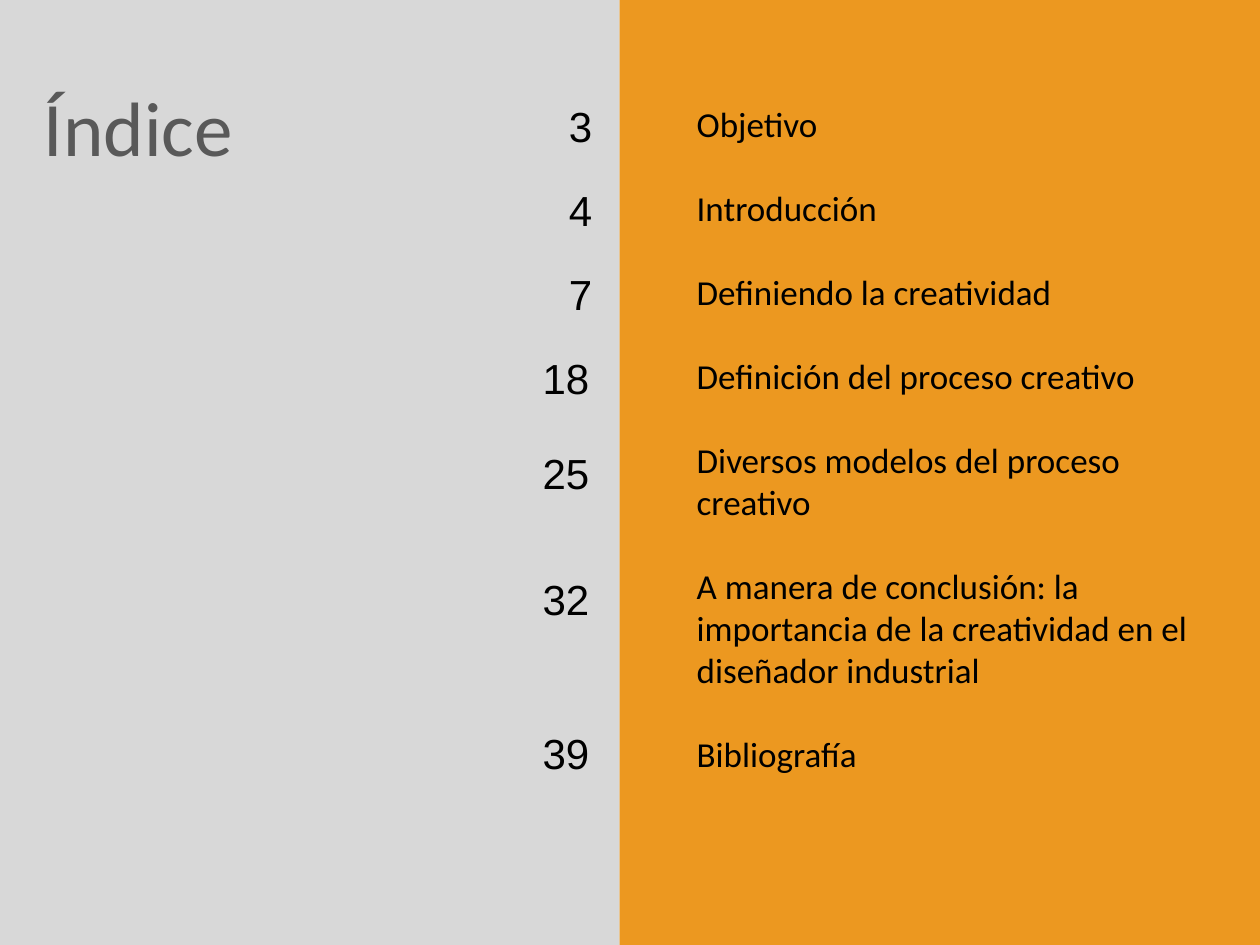
from pptx import Presentation
from pptx.dml.color import RGBColor
from pptx.enum.shapes import MSO_SHAPE
from pptx.util import Pt

COLORS = {"orange": "EC9820", "gray": "D8D8D8", "title": "595959", "text": "000000"}
WIDTH, HEIGHT = 720, 540
DIVIDER = 354
PAGE_LEFT = {1: 318, 2: 303}  # by number of digits

# Section, page number, top of the page number
SECTIONS = [
    ("Objetivo", "3", 54),
    ("Introducción", "4", 102),
    ("Definiendo la creatividad", "7", 150),
    ("Definición del proceso creativo", "18", 198),
    ("Diversos modelos del proceso creativo", "25", 252),
    ("A manera de conclusión: la importancia de la creatividad en el diseñador industrial",
     "32", 324),
    ("Bibliografía", "39", 412),
]


class IndexSlide:
    heading_font = "Calibri"
    number_font = "Arial"

    def __init__(self, presentation):
        self.slide = presentation.slides.add_slide(presentation.slide_layouts[6])

    def panel(self, left, width, color):
        shape = self.slide.shapes.add_shape(
            MSO_SHAPE.RECTANGLE, Pt(left), Pt(0), Pt(width), Pt(HEIGHT))
        shape.shadow.inherit = False
        shape.fill.solid()
        shape.fill.fore_color.rgb = RGBColor.from_string(COLORS[color])
        shape.line.fill.background()

    def text(self, lines, left, top, width, height, size, font, color="text", gap=0):
        """Add a text box with one paragraph per line, gap points apart."""
        box = self.slide.shapes.add_textbox(Pt(left), Pt(top), Pt(width), Pt(height))
        text_frame = box.text_frame
        text_frame.word_wrap = True
        text_frame.text = "\n".join(lines)
        for index, paragraph in enumerate(text_frame.paragraphs):
            paragraph.space_before = Pt(gap if index else 0)
            for run in paragraph.runs:
                run.font.size = Pt(size)
                run.font.name = font
                run.font.color.rgb = RGBColor.from_string(COLORS[color])

    def title(self, text):
        self.text([text], 18, 42, 126, 60, 44, self.heading_font, "title")

    def sections(self, names):
        self.text(names, 391, 55, 300, 395, 20, self.heading_font, gap=24)

    def page_number(self, number, top):
        self.text([number], PAGE_LEFT[len(number)], top, 66, 36, 24, self.number_font)


def main():
    presentation = Presentation()
    presentation.slide_width = Pt(WIDTH)
    presentation.slide_height = Pt(HEIGHT)
    index = IndexSlide(presentation)
    index.panel(DIVIDER, WIDTH - DIVIDER, "orange")
    index.sections([name for name, _, _ in SECTIONS])
    index.panel(0, DIVIDER, "gray")
    index.title("Índice")
    for _, number, top in SECTIONS:
        index.page_number(number, top)
    presentation.save("out.pptx")


if __name__ == "__main__":
    main()
